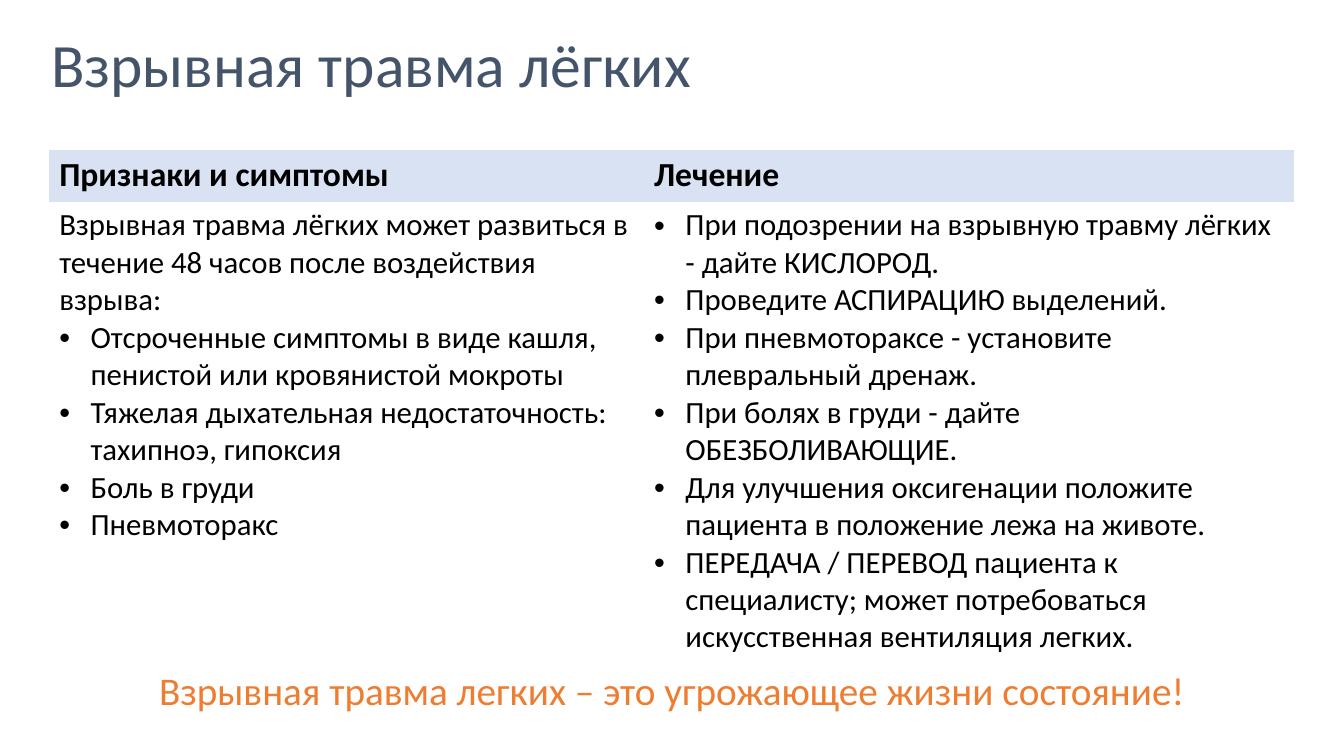
from dataclasses import dataclass

from lxml import etree
from pptx import Presentation
from pptx import util as u
from pptx.dml.color import RGBColor
from pptx.enum import text
from pptx.oxml.ns import qn
from pptx.slide import Slide
from pptx.table import Table
from pptx.text.text import TextFrame

FONT = "Calibri"
BLACK = RGBColor(0x00, 0x00, 0x00)
SLATE = RGBColor(0x44, 0x54, 0x6A)
ORANGE = RGBColor(0xED, 0x7D, 0x31)
PALE_BLUE = RGBColor(0xD8, 0xE2, 0xF3)
NO_GRID_STYLE = "{2D5ABB26-0587-4C30-8999-92F81FD0307C}"
BULLET_INDENT = u.Cm(0.79)
TABLE_LEFT, TABLE_TOP = u.Cm(1.24), u.Cm(3.78)
HEADER_HEIGHT, BODY_HEIGHT = u.Cm(1.3), u.Cm(11.4)


@dataclass(frozen=True)
class Column:
    heading: str
    width: u.Length
    points: tuple[str, ...]
    intro: str = ""


COLUMNS = (
    Column(
        "Признаки и симптомы",
        u.Cm(14.99),
        (
            "Отсроченные симптомы в виде кашля, пенистой или кровянистой мокроты",
            "Тяжелая дыхательная недостаточность: тахипноэ, гипоксия",
            "Боль в груди",
            "Пневмоторакс",
        ),
        intro="Взрывная травма лёгких может развиться в течение 48 часов после воздействия взрыва:",
    ),
    Column(
        "Лечение",
        u.Cm(16.38),
        (
            "При подозрении на взрывную травму лёгких - дайте КИСЛОРОД.",
            "Проведите АСПИРАЦИЮ выделений.",
            "При пневмотораксе - установите плевральный дренаж.",
            "При болях в груди - дайте ОБЕЗБОЛИВАЮЩИЕ.",
            "Для улучшения оксигенации положите пациента в положение лежа на животе.",
            "ПЕРЕДАЧА / ПЕРЕВОД пациента к специалисту; может потребоваться "
            "искусственная вентиляция легких.",
        ),
    ),
)
TABLE_WIDTH = u.Emu(sum(column.width for column in COLUMNS))


def write(
    frame: TextFrame,
    wording: str,
    *,
    size: float,
    color: RGBColor = BLACK,
    bold: bool = False,
    bullet: bool = False,
    align: text.PP_ALIGN = text.PP_ALIGN.LEFT,
    line_spacing: float = 1.0,
) -> None:
    paragraph = frame.paragraphs[0] if not frame.text else frame.add_paragraph()
    paragraph.alignment = align
    paragraph.line_spacing = line_spacing
    if bullet:
        properties = paragraph._p.get_or_add_pPr()
        properties.set("marL", str(BULLET_INDENT))
        properties.set("indent", str(-BULLET_INDENT))
        etree.SubElement(properties, qn("a:buFont")).set("typeface", "Arial")
        etree.SubElement(properties, qn("a:buChar")).set("char", "•")
    run = paragraph.add_run()
    run.text = wording
    run.font.name = FONT
    run.font.size = u.Pt(size)
    run.font.bold = bold
    run.font.color.rgb = color


def add_frame(
    slide: Slide, left: u.Length, top: u.Length, width: u.Length, height: u.Length
) -> TextFrame:
    frame = slide.shapes.add_textbox(left, top, width, height).text_frame
    frame.word_wrap = True
    return frame


def add_plain_table(slide: Slide) -> Table:
    holder = slide.shapes.add_table(
        2, len(COLUMNS), TABLE_LEFT, TABLE_TOP, TABLE_WIDTH, HEADER_HEIGHT + BODY_HEIGHT
    )
    for style in holder.element.iter(qn("a:tableStyleId")):
        style.text = NO_GRID_STYLE
    table = holder.table
    table.first_row = True
    table.horz_banding = False
    table.rows[0].height = HEADER_HEIGHT
    table.rows[1].height = BODY_HEIGHT
    return table


def fill_column(table: Table, index: int, column: Column) -> None:
    table.columns[index].width = column.width
    heading, body = table.cell(0, index), table.cell(1, index)
    heading.fill.solid()
    heading.fill.fore_color.rgb = PALE_BLUE
    body.fill.background()
    write(heading.text_frame, column.heading, size=24, bold=True)
    if column.intro:
        write(body.text_frame, column.intro, size=22)
    for point in column.points:
        write(body.text_frame, point, size=22, bullet=True)


def main() -> None:
    deck = Presentation()
    deck.slide_width, deck.slide_height = u.Cm(33.87), u.Cm(19.05)
    slide = deck.slides.add_slide(deck.slide_layouts[6])

    title = add_frame(slide, u.Cm(1.04), u.Cm(0.38), u.Cm(29.21), u.Cm(2.67))
    title.vertical_anchor = text.MSO_ANCHOR.MIDDLE
    write(title, "Взрывная травма лёгких", size=44, color=SLATE, line_spacing=0.9)

    table = add_plain_table(slide)
    for index, column in enumerate(COLUMNS):
        fill_column(table, index, column)

    warning = add_frame(slide, TABLE_LEFT, u.Cm(16.66), TABLE_WIDTH, u.Cm(1.45))
    write(
        warning,
        "Взрывная травма легких – это угрожающее жизни состояние!",
        size=28,
        color=ORANGE,
        align=text.PP_ALIGN.CENTER,
    )
    deck.save("out.pptx")


if __name__ == "__main__":
    main()
